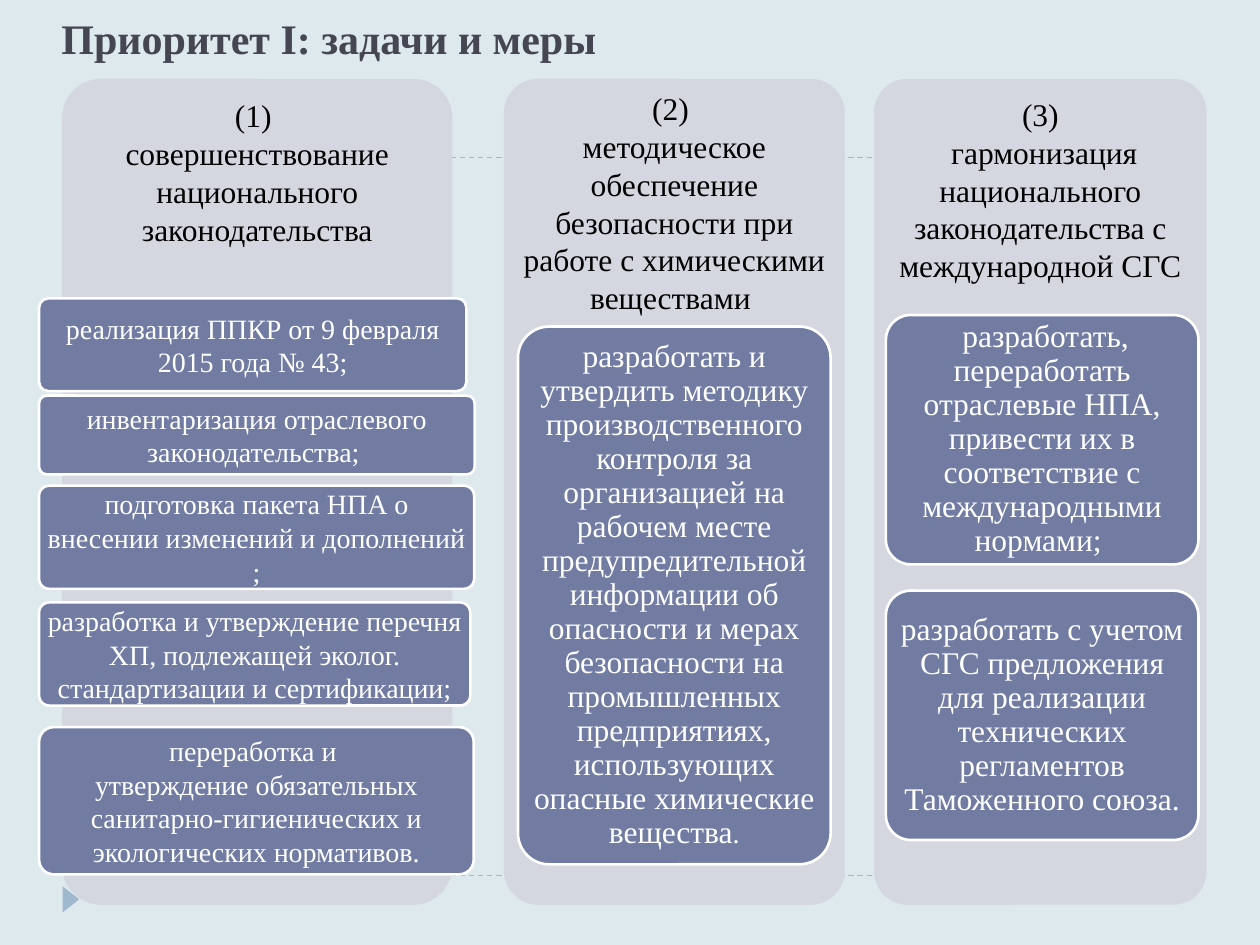
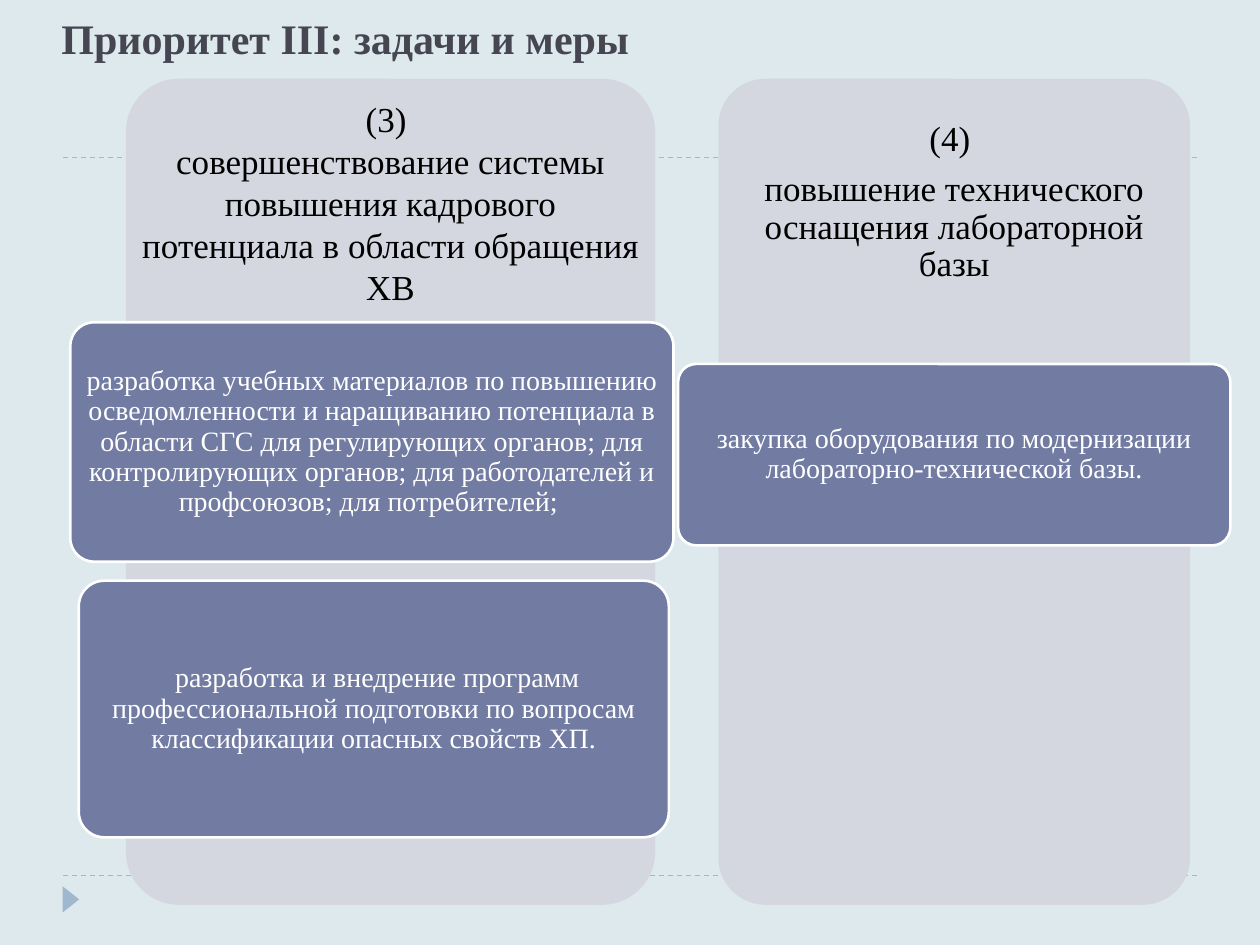
import pptx
import pptx.util
import pptx.dml.color
import pptx.enum.dml
import pptx.enum.shapes
import pptx.enum.text
import lxml.etree

Pt = pptx.util.Pt
RGB = pptx.dml.color.RGBColor
SHAPE = pptx.enum.shapes.MSO_SHAPE
ALIGN = pptx.enum.text.PP_ALIGN
ANCHOR = pptx.enum.text.MSO_ANCHOR

# Content. Card text: paragraphs, each a list of (text, size) spans.
# Column: left, width, heading; card: left, top, width, height. All in points.
SLIDES = [
    {
        "title": "Приоритет I: задачи и меры",
        "heading_size": 18,
        "heading_inset": 5,
        "columns": [
            {
                "left": 35.5, "width": 223, "space_below": 35,
                "heading": ["(1) ", "совершенствование национального законодательства"],
                "cards": [
                    ((22.3, 170.5, 244.2, 53), 1,
                     [[("реализация ППКР от 9 февраля 2015 года № 43;", 16)]]),
                    ((22.3, 226.1, 249, 45), 1,
                     [[("инвентаризация отраслевого законодательства; ", 16)]]),
                    ((22.3, 277.5, 248.7, 59), 1,
                     [[("подготовка пакета НПА о внесении изменений и дополнений ;", 16)]]),
                    ((22.3, 344.2, 246.5, 59), 1,
                     [[("разработка и утверждение перечня ХП, подлежащей эколог. "
                        "стандартизации и сертификации;", 16)]]),
                    ((22.3, 415.5, 248.4, 84.2), 1,
                     [[("переработка и ", 16)],
                      [("утверждение обязательных санитарно-гигиенических и "
                        "экологических нормативов.", 16)]]),
                ],
            },
            {
                "left": 288, "width": 194.7,
                "heading": ["(2) ", "методическое обеспечение безопасности при работе "
                                    "с химическими веществами "],
                "cards": [
                    ((296, 186.6, 178.7, 307.3), 0.9,
                     [[("разработать и утвердить методику производственного контроля за "
                        "организацией на рабочем месте предупредительной информации об "
                        "опасности и мерах безопасности на промышленных предприятиях, "
                        "использующих опасные химические вещества", 18), (".", 16)]]),
                ],
            },
            {
                "left": 499.5, "width": 190, "space_below": 15,
                "heading": ["(3)", " гармонизация национального законодательства "
                                   "с международной СГС"],
                "cards": [
                    ((506.2, 180, 178.6, 142.5), 0.9,
                     [[(" ", 16),
                       ("разработать, переработать отраслевые НПА, привести их в "
                        "соответствие с международными нормами; ", 18)]]),
                    ((506.2, 337.5, 178.6, 142.5), 0.9,
                     [[("разработать с учетом СГС предложения для реализации "
                        "технических регламентов Таможенного союза.", 18)]]),
                ],
            },
        ],
    },
    {
        "title": "Приоритет III: задачи и меры",
        "heading_size": 20,
        "heading_inset": 5.5,
        "columns": [
            {
                "left": 72, "width": 302.4,
                "heading": ["(3) ", "совершенствование системы повышения кадрового "
                                    "потенциала в области обращения ХВ"],
                "cards": [
                    ((40.2, 184.2, 344.7, 136.8), 0.9,
                     [[("разработка учебных материалов по повышению осведомленности и "
                        "наращиванию потенциала в области СГС для регулирующих органов; "
                        "для контролирующих органов; для работодателей и профсоюзов; "
                        "для потребителей; ", 16)]]),
                    ((45, 331.8, 337.2, 146.7), 0.9,
                     [[(" разработка и внедрение программ профессиональной подготовки по "
                        "вопросам классификации опасных свойств ХП.", 16)]]),
                ],
            },
            {
                "left": 410.5, "width": 269.5, "spacing": 0.9, "space_after": 7,
                "heading": ["(4) ", "повышение технического оснащения лабораторной базы"],
                "cards": [
                    ((387.5, 208, 315.6, 103.7), 0.9,
                     [[("закупка оборудования по модернизации "
                        "лабораторно-технической базы.", 16)]]),
                ],
            },
        ],
    },
]

# Shared style
FONT = "Times New Roman"
BACKGROUND = RGB(0xDD, 0xE9, 0xEC)
ACCENT = RGB(0x9F, 0xB8, 0xCD)
TITLE_COLOUR = RGB(0x46, 0x46, 0x53)
COLUMN_FILL = RGB(0xD5, 0xD7, 0xE0)
CARD_FILL = RGB(0x72, 0x7C, 0xA3)
WHITE = RGB(0xFF, 0xFF, 0xFF)
BLACK = RGB(0, 0, 0)
COLUMN_TOP, COLUMN_HEIGHT = 45, 472
HEADING_HEIGHT = COLUMN_HEIGHT * 0.3
CORNER = 0.1
RULES = (90, 500.4)


def add_shape(page, kind, frame, fill, outline=None):
    shape = page.shapes.add_shape(kind, *map(Pt, frame))
    shape.shadow.inherit = False
    shape.fill.solid()
    shape.fill.fore_color.rgb = fill
    if outline is None:
        shape.line.fill.background()
    else:
        shape.line.color.rgb = outline
        shape.line.width = Pt(1.5)
    return shape


def add_text(box, paras, colour, insets, anchor=ANCHOR.MIDDLE, align=ALIGN.CENTER,
             spacing=1, space_after=0, bold=False):
    frame = box.text_frame
    frame.word_wrap = True
    frame.vertical_anchor = anchor
    (frame.margin_left, frame.margin_top,
     frame.margin_right, frame.margin_bottom) = map(Pt, insets)
    for index, spans in enumerate(paras):
        para = frame.add_paragraph() if index else frame.paragraphs[0]
        para.alignment = align
        para.line_spacing = spacing
        para.space_after = Pt(space_after if index < len(paras) - 1 else 0)
        for text, size in spans:
            span = para.add_run()
            span.text = text
            span.font.name = FONT
            span.font.size = Pt(size)
            span.font.bold = bold
            span.font.color.rgb = colour


def add_base(page, title):
    page.background.fill.solid()
    page.background.fill.fore_color.rgb = BACKGROUND
    # Dashed rules and footer marker
    for y in RULES:
        rule = page.shapes.add_connector(pptx.enum.shapes.MSO_CONNECTOR.STRAIGHT,
                                         Pt(36), Pt(y), Pt(684), Pt(y))
        rule.line.color.rgb = ACCENT
        rule.line.width = Pt(0.75)
        rule.line.dash_style = pptx.enum.dml.MSO_LINE.DASH
        properties = rule._element.spPr
        lxml.etree.SubElement(properties, pptx.oxml.ns.qn("a:effectLst"))
    marker = add_shape(page, SHAPE.ISOSCELES_TRIANGLE, (33, 509.2, 15, 9.5), ACCENT)
    marker.rotation = 90
    # Title
    box = page.shapes.add_textbox(Pt(28), Pt(16.5), Pt(656), Pt(23))
    add_text(box, [[(title, 24)]], TITLE_COLOUR, (7.2, 3.6, 7.2, 3.6),
             anchor=ANCHOR.BOTTOM, align=ALIGN.LEFT, bold=True)


def add_column(page, column, size, inset):
    left, width = column["left"], column["width"]
    panel = add_shape(page, SHAPE.ROUNDED_RECTANGLE,
                      (left, COLUMN_TOP, width, COLUMN_HEIGHT), COLUMN_FILL)
    panel.adjustments[0] = CORNER
    heading = page.shapes.add_textbox(Pt(left), Pt(COLUMN_TOP), Pt(width), Pt(HEADING_HEIGHT))
    add_text(heading, [[(line, size)] for line in column["heading"]], BLACK,
             (inset, inset, inset, inset + column.get("space_below", 0)),
             spacing=column.get("spacing", 1), space_after=column.get("space_after", 0))
    for frame, spacing, paras in column["cards"]:
        card = add_shape(page, SHAPE.ROUNDED_RECTANGLE, frame, CARD_FILL, WHITE)
        card.adjustments[0] = CORNER
        add_text(card, paras, WHITE, (3, 2.3, 3, 2.3), spacing=spacing)


def main():
    deck = pptx.Presentation()
    deck.slide_width, deck.slide_height = Pt(720), Pt(540)
    for content in SLIDES:
        page = deck.slides.add_slide(deck.slide_layouts[6])
        add_base(page, content["title"])
        for column in content["columns"]:
            add_column(page, column, content["heading_size"], content["heading_inset"])
    deck.save("out.pptx")


if __name__ == "__main__":
    main()
